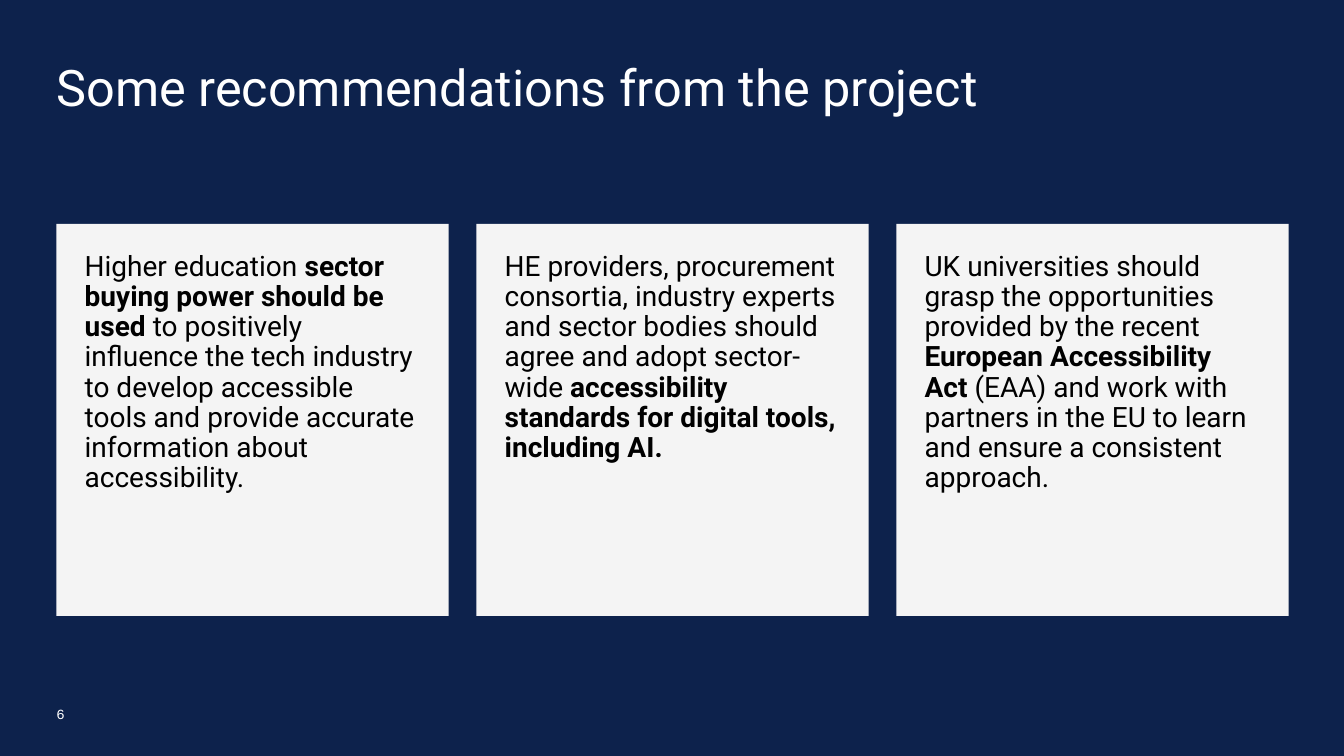
from dataclasses import dataclass

from lxml import etree
from pptx import Presentation
from pptx.dml.color import RGBColor
from pptx.enum.text import MSO_ANCHOR, MSO_AUTO_SIZE, PP_ALIGN
from pptx.oxml.ns import qn
from pptx.util import Inches, Pt

TOP, MIDDLE = MSO_ANCHOR.TOP, MSO_ANCHOR.MIDDLE
LEFT = PP_ALIGN.LEFT
NO_AUTOFIT = MSO_AUTO_SIZE.NONE
COMPARISON_LAYOUT = 4


@dataclass(frozen=True)
class Theme:
    navy: str = "0D224C"
    card: str = "F4F4F4"
    white: str = "FFFFFF"
    black: str = "000000"
    main_font: str = "Roboto"
    number_font: str = "Courier New"
    title_size: int = 36
    card_size: int = 20
    number_size: int = 10


# Each recommendation is a list of (text, bold) runs
RECOMMENDATIONS = [
    [("Higher education ", False),
     ("sector buying power should be used ", True),
     ("to positively influence the tech industry to develop accessible tools "
      "and provide accurate information about accessibility.", False)],
    [("HE providers, procurement consortia, industry experts and sector bodies "
      "should agree and adopt sector-wide ", False),
     ("accessibility standards for digital tools, including AI.", True)],
    [("UK universities should grasp the opportunities provided by the recent ", False),
     ("European Accessibility Act ", True),
     ("(EAA) and work with partners in the EU to learn and ensure a consistent "
      "approach.", False)],
]


def apply_format(target, values):
    for name, value in values.items():
        setattr(target, name, value)


class SlideBuilder:
    def __init__(self, slide, theme):
        self.slide = slide
        self.theme = theme

    def background(self):
        fill = self.slide.background.fill
        fill.solid()
        fill.fore_color.rgb = RGBColor.from_string(self.theme.navy)

    def place(self, shape, left, top, width, height):
        apply_format(shape, {"left": Inches(left), "top": Inches(top),
                             "width": Inches(width), "height": Inches(height)})

    def add_text(self, shape, runs, font, size, color, inset=0, anchor=TOP, spacing=1.0):
        frame = shape.text_frame
        margin = Inches(inset)
        apply_format(frame, {"word_wrap": True, "auto_size": NO_AUTOFIT,
                             "vertical_anchor": anchor,
                             "margin_left": margin, "margin_top": margin,
                             "margin_right": margin, "margin_bottom": margin})
        paragraph = frame.paragraphs[0]
        apply_format(paragraph, {"alignment": LEFT, "line_spacing": spacing,
                                 "space_before": Pt(0)})
        for text, bold in runs:
            run = paragraph.add_run()
            run.text = text
            apply_format(run.font, {"name": font, "size": Pt(size), "bold": bold})
            run.font.color.rgb = RGBColor.from_string(color)
        return paragraph

    def title(self, text, *box):
        title = self.slide.shapes.title
        self.place(title, *box)
        self.add_text(title, [(text, False)], self.theme.main_font,
                      self.theme.title_size, self.theme.white)

    def card(self, placeholder, runs, *box):
        self.place(placeholder, *box)
        placeholder.fill.solid()
        placeholder.fill.fore_color.rgb = RGBColor.from_string(self.theme.card)
        paragraph = self.add_text(placeholder, runs, self.theme.main_font,
                                  self.theme.card_size, self.theme.black,
                                  inset=0.28, spacing=0.9)
        # Remove the list bullet and its hanging indent
        properties = paragraph._p.get_or_add_pPr()
        properties.set("marL", "0")
        properties.set("indent", "0")
        etree.SubElement(properties, qn("a:buNone"))

    def page_number(self, number, *box):
        number_box = self.slide.shapes.add_textbox(*map(Inches, box))
        self.add_text(number_box, [(number, False)], self.theme.number_font,
                      self.theme.number_size, self.theme.white, anchor=MIDDLE)


def main():
    presentation = Presentation()
    presentation.slide_width = Inches(13.33)
    presentation.slide_height = Inches(7.5)
    layout = presentation.slide_layouts[COMPARISON_LAYOUT]
    slide = presentation.slides.add_slide(layout)
    builder = SlideBuilder(slide, Theme())

    # Background, title and page number
    margin = 0.56
    builder.background()
    builder.title("Some recommendations from the project", margin, 0.56, 11.94, 0.55)
    builder.page_number("6", margin, 6.94, 0.56, 0.28)

    # Three square cards in a row, spread evenly between first and last
    card_side, card_top, last_left = 3.89, 2.22, 8.89
    card_pitch = (last_left - margin) / (len(RECOMMENDATIONS) - 1)
    bodies = list(slide.placeholders)[1:]
    for index, (body, runs) in enumerate(zip(bodies, RECOMMENDATIONS)):
        builder.card(body, runs, margin + index * card_pitch, card_top,
                     card_side, card_side)

    # The layout has one body more than there are cards
    for spare in bodies[len(RECOMMENDATIONS):]:
        spare.element.getparent().remove(spare.element)

    presentation.save("out.pptx")


if __name__ == "__main__":
    main()
